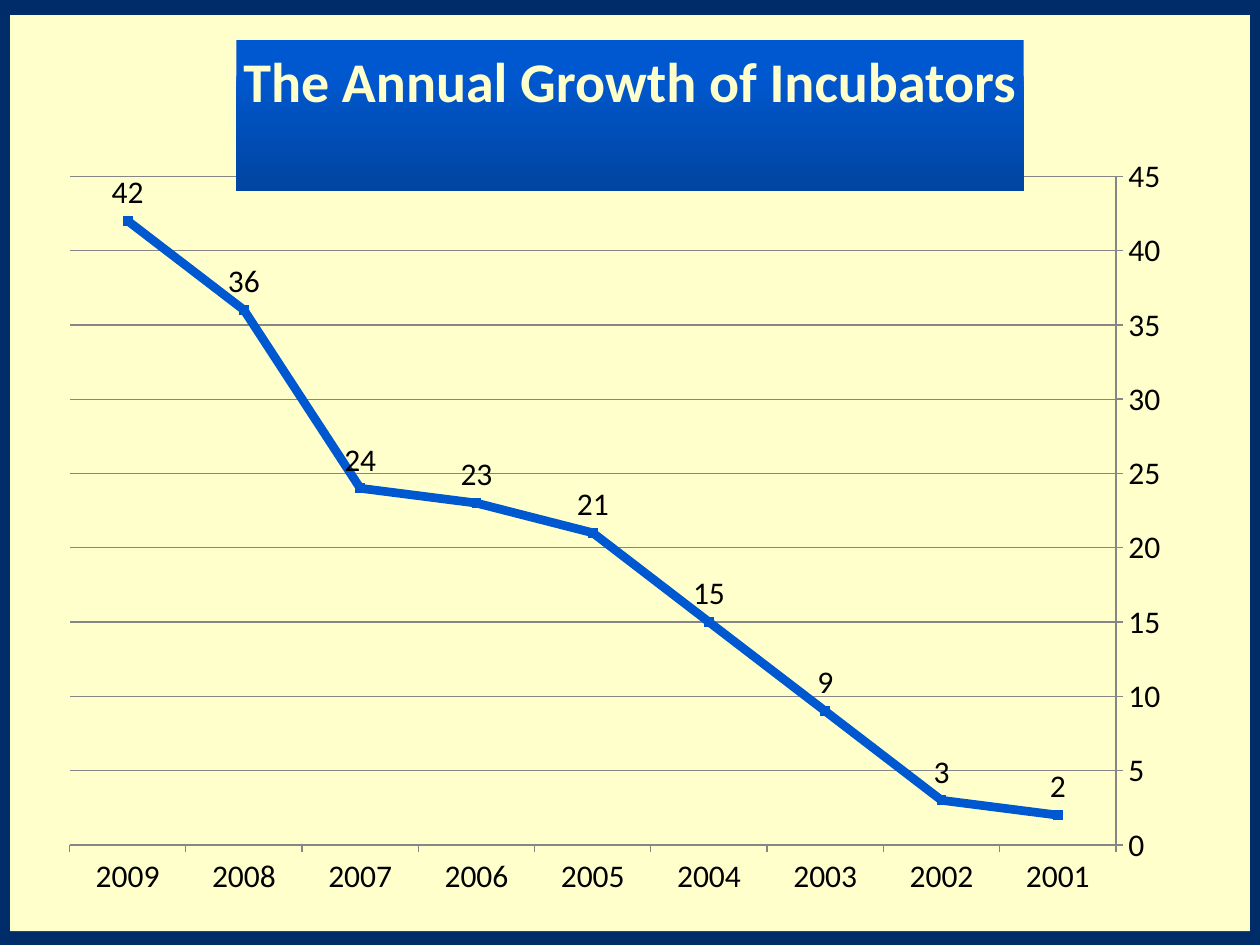
from pptx import Presentation
from pptx.chart.data import CategoryChartData
from pptx.dml.color import RGBColor
from pptx.enum.chart import (XL_CHART_TYPE, XL_LABEL_POSITION, XL_MARKER_STYLE,
                             XL_TICK_MARK)
from pptx.enum.text import MSO_ANCHOR, MSO_AUTO_SIZE, PP_ALIGN
from pptx.oxml import parse_xml
from pptx.oxml.ns import nsdecls, qn
from pptx.util import Pt

COLORS = {"frame": "002D6A", "paper": "FFFFCC", "growth": "0058D0",
          "title_end": "0045A0", "grid": "868686", "text": "000000"}
FONT = "Calibri"
INCUBATORS = {"2001": 2, "2002": 3, "2003": 9, "2004": 15, "2005": 21,
              "2006": 23, "2007": 24, "2008": 36, "2009": 42}


def rgb(key):
    return RGBColor.from_string(COLORS[key])


def style_font(font, size, color, bold=False):
    font.name, font.size, font.bold = FONT, Pt(size), bold
    font.color.rgb = rgb(color)


def style_line(line, color, width):
    line.color.rgb = rgb(color)
    line.width = Pt(width)


def set_chart_fill(chart, color):
    chart.element.find(qn("c:chart")).addnext(parse_xml(
        f'<c:spPr {nsdecls("c", "a")}><a:solidFill><a:srgbClr val="{COLORS[color]}"/>'
        '</a:solidFill><a:ln><a:noFill/></a:ln></c:spPr>'))


def set_plot_layout(chart, x, y, w, h):
    plot_area = chart.element.find(qn("c:chart")).find(qn("c:plotArea"))
    for layout in plot_area.findall(qn("c:layout")):
        plot_area.remove(layout)
    sizes = "".join(f'<c:{tag} val="{value}"/>'
                    for tag, value in zip("xywh", (x, y, w, h)))
    plot_area.insert(0, parse_xml(
        f'<c:layout {nsdecls("c")}><c:manualLayout><c:layoutTarget val="inner"/>'
        f'<c:xMode val="edge"/><c:yMode val="edge"/>{sizes}'
        '</c:manualLayout></c:layout>'))


def style_axes(chart):
    years, count = chart.category_axis, chart.value_axis
    years.reverse_order = True
    count.minimum_scale, count.maximum_scale, count.major_unit = 0, 45, 5
    count.has_major_gridlines = True
    style_line(count.major_gridlines.format.line, "grid", 0.75)
    for axis in (years, count):
        axis.major_tick_mark = XL_TICK_MARK.OUTSIDE
        axis.minor_tick_mark = XL_TICK_MARK.NONE
        style_line(axis.format.line, "grid", 0.75)
        style_font(axis.tick_labels.font, 18, "text")


def style_growth(growth):
    growth.smooth = False
    style_line(growth.format.line, "growth", 5)
    growth.marker.style = XL_MARKER_STYLE.SQUARE
    growth.marker.size = 5
    growth.marker.format.fill.solid()
    growth.marker.format.fill.fore_color.rgb = rgb("growth")
    style_line(growth.marker.format.line, "growth", 0.75)
    labels = growth.data_labels
    labels.show_value = True
    labels.position = XL_LABEL_POSITION.ABOVE
    style_font(labels.font, 18, "text")


def add_growth_chart(slide):
    data = CategoryChartData()
    data.categories = list(INCUBATORS)
    data.add_series("Series 1", list(INCUBATORS.values()))
    frame = slide.shapes.add_chart(XL_CHART_TYPE.LINE_MARKERS_STACKED, Pt(5.76),
                                   Pt(8.64), Pt(708.48), Pt(523.44), data)
    chart = frame.chart
    chart.has_title = False
    chart.has_legend = False
    style_font(chart.font, 18, "text")
    set_chart_fill(chart, "paper")
    set_plot_layout(chart, 0.048, 0.176, 0.844, 0.73)
    style_axes(chart)
    chart.plots[0].vary_by_categories = False
    style_growth(chart.plots[0].series[0])
    return frame


def fill_title(title, text):
    title.left, title.top, title.width, title.height = Pt(135), Pt(23), Pt(450), Pt(86.4)
    # Vertical gradient behind the heading
    title.fill.gradient()
    title.fill.gradient_angle = 270
    for stop, color, position in zip(title.fill.gradient_stops,
                                     ("growth", "title_end"), (0.2, 1)):
        stop.color.rgb = rgb(color)
        stop.position = position
    # Heading at the top of the box
    heading = title.text_frame
    heading.auto_size = MSO_AUTO_SIZE.NONE
    heading.word_wrap = False
    heading.vertical_anchor = MSO_ANCHOR.TOP
    heading.margin_left = heading.margin_right = heading.margin_bottom = 0
    heading.margin_top = Pt(3.5)
    paragraph = heading.paragraphs[0]
    paragraph.alignment = PP_ALIGN.CENTER
    paragraph.line_spacing = 1.0
    paragraph.space_before = Pt(0)
    run = paragraph.add_run()
    run.text = text
    style_font(run.font, 32, "paper", bold=True)


def main():
    prs = Presentation()
    prs.slide_width, prs.slide_height = Pt(720), Pt(540)
    slide = prs.slides.add_slide(prs.slide_layouts[5])
    slide.background.fill.solid()
    slide.background.fill.fore_color.rgb = rgb("frame")

    growth_chart = add_growth_chart(slide)
    title = slide.shapes.title
    fill_title(title, "The Annual Growth of Incubators")
    # Bring the title in front of the chart
    growth_chart.element.addnext(title.element)

    prs.save("out.pptx")


if __name__ == "__main__":
    main()
